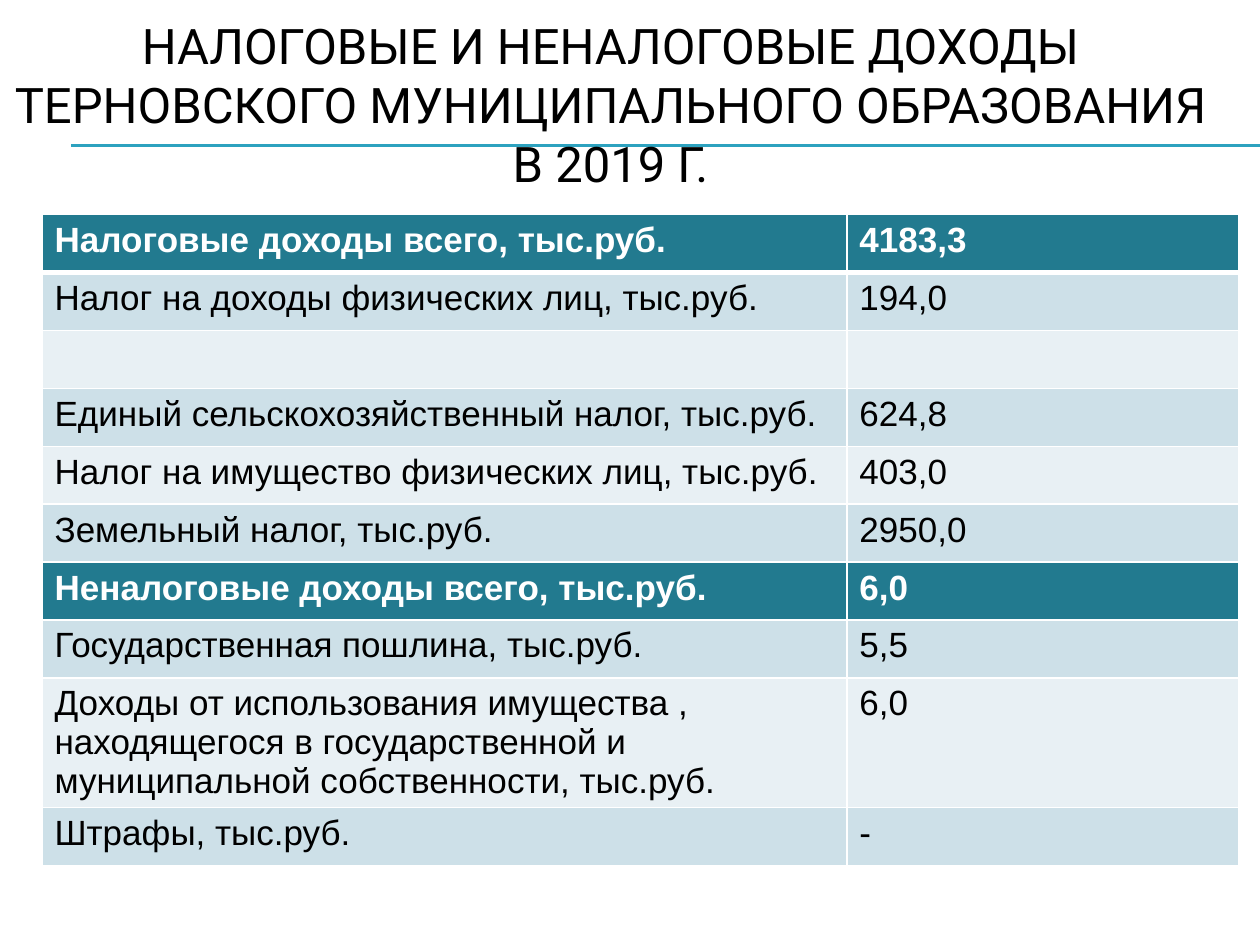
from typing import NamedTuple

from lxml.etree import SubElement
from pptx import Presentation
from pptx.dml.color import RGBColor
from pptx.enum.shapes import MSO_CONNECTOR
from pptx.enum.text import MSO_ANCHOR, MSO_AUTO_SIZE, PP_ALIGN
from pptx.oxml.ns import qn
from pptx.util import Pt

BLACK = RGBColor(0x00, 0x00, 0x00)
WHITE = RGBColor(0xFF, 0xFF, 0xFF)
TEAL = RGBColor(0x22, 0x7A, 0x8F)
LINE_BLUE = RGBColor(0x2D, 0xA2, 0xBF)
BAND_DARK = RGBColor(0xCD, 0xE0, 0xE8)
BAND_LIGHT = RGBColor(0xE8, 0xF0, 0xF4)

ROW_HEIGHT = 33.1
COLUMN_WIDTHS = (459.9, 224.1)


class IncomeRow(NamedTuple):
    label: str
    value: str
    is_total: bool = False
    height: float = ROW_HEIGHT


ROWS = [
    IncomeRow("Налоговые доходы всего, тыс.руб.", "4183,3", is_total=True),
    IncomeRow("Налог на доходы физических лиц, тыс.руб.", "194,0"),
    IncomeRow("", ""),
    IncomeRow("Единый сельскохозяйственный налог, тыс.руб.", "624,8"),
    IncomeRow("Налог на имущество физических лиц, тыс.руб.", "403,0"),
    IncomeRow("Земельный налог, тыс.руб.", "2950,0"),
    IncomeRow("Неналоговые доходы всего, тыс.руб.", "6,0", is_total=True),
    IncomeRow("Государственная пошлина, тыс.руб.", "5,5"),
    IncomeRow("Доходы от использования имущества , находящегося в государственной "
              "и муниципальной собственности, тыс.руб.", "6,0", height=58.3),
    IncomeRow("Штрафы, тыс.руб.", "-"),
]


def add_rule(slide, y: float) -> None:
    """Add a thin horizontal line behind the title."""
    line = slide.shapes.add_connector(
        MSO_CONNECTOR.STRAIGHT, Pt(40.5), Pt(y), Pt(720), Pt(y))
    line.line.color.rgb = LINE_BLUE
    line.line.width = Pt(0.75)
    SubElement(line._element.spPr, qn("a:effectLst"))
    slide.shapes._spTree.insert(2, line._element)


def add_run(paragraph, text: str, font_name: str, size: float,
            color: RGBColor, bold: bool = False) -> None:
    run = paragraph.add_run()
    run.text = text
    run.font.name = font_name
    run.font.size = Pt(size)
    run.font.bold = bold
    run.font.color.rgb = color


def set_borders(cell, bottom_width: float) -> None:
    """Give a cell white borders; they must precede its fill."""
    properties = cell._tc.get_or_add_tcPr()
    for side, width in (("L", 1), ("R", 1), ("T", 1), ("B", bottom_width)):
        border = SubElement(properties, qn(f"a:ln{side}"), w=str(Pt(width)))
        fill = SubElement(border, qn("a:solidFill"))
        SubElement(fill, qn("a:srgbClr"), val=str(WHITE))


def fill_row(table, index: int, row: IncomeRow) -> None:
    table.rows[index].height = Pt(row.height)
    band = BAND_DARK if index % 2 else BAND_LIGHT
    for column, text in enumerate((row.label, row.value)):
        cell = table.cell(index, column)
        set_borders(cell, bottom_width=3 if index == 0 else 1)
        cell.fill.solid()
        cell.fill.fore_color.rgb = TEAL if row.is_total else band
        if text:
            add_run(cell.text_frame.paragraphs[0], text, "Arial", 20,
                    WHITE if row.is_total else BLACK, row.is_total)


def main() -> None:
    presentation = Presentation()
    presentation.slide_width, presentation.slide_height = Pt(720), Pt(540)
    slide = presentation.slides.add_slide(presentation.slide_layouts[5])

    # Title
    title = slide.shapes.title
    title.left, title.top, title.width, title.height = Pt(0), Pt(22.5), Pt(697.6), Pt(73.4)
    frame = title.text_frame
    frame.word_wrap = True
    frame.auto_size = MSO_AUTO_SIZE.NONE
    frame.vertical_anchor = MSO_ANCHOR.MIDDLE
    paragraph = frame.paragraphs[0]
    paragraph.alignment = PP_ALIGN.CENTER
    add_run(paragraph, "НАЛОГОВЫЕ И НЕНАЛОГОВЫЕ ДОХОДЫ ТЕРНОВСКОГО "
            "МУНИЦИПАЛЬНОГО ОБРАЗОВАНИЯ В 2019 Г.", "Roboto", 28, BLACK)

    # Double rule behind the title
    for y in (83.5, 82.8):
        add_rule(slide, y)

    # Income table
    table = slide.shapes.add_table(
        len(ROWS), len(COLUMN_WIDTHS), Pt(24), Pt(122.7),
        Pt(sum(COLUMN_WIDTHS)), Pt(sum(row.height for row in ROWS))).table
    for column, width in zip(table.columns, COLUMN_WIDTHS):
        column.width = Pt(width)
    for index, row in enumerate(ROWS):
        fill_row(table, index, row)

    presentation.save("out.pptx")


if __name__ == "__main__":
    main()
